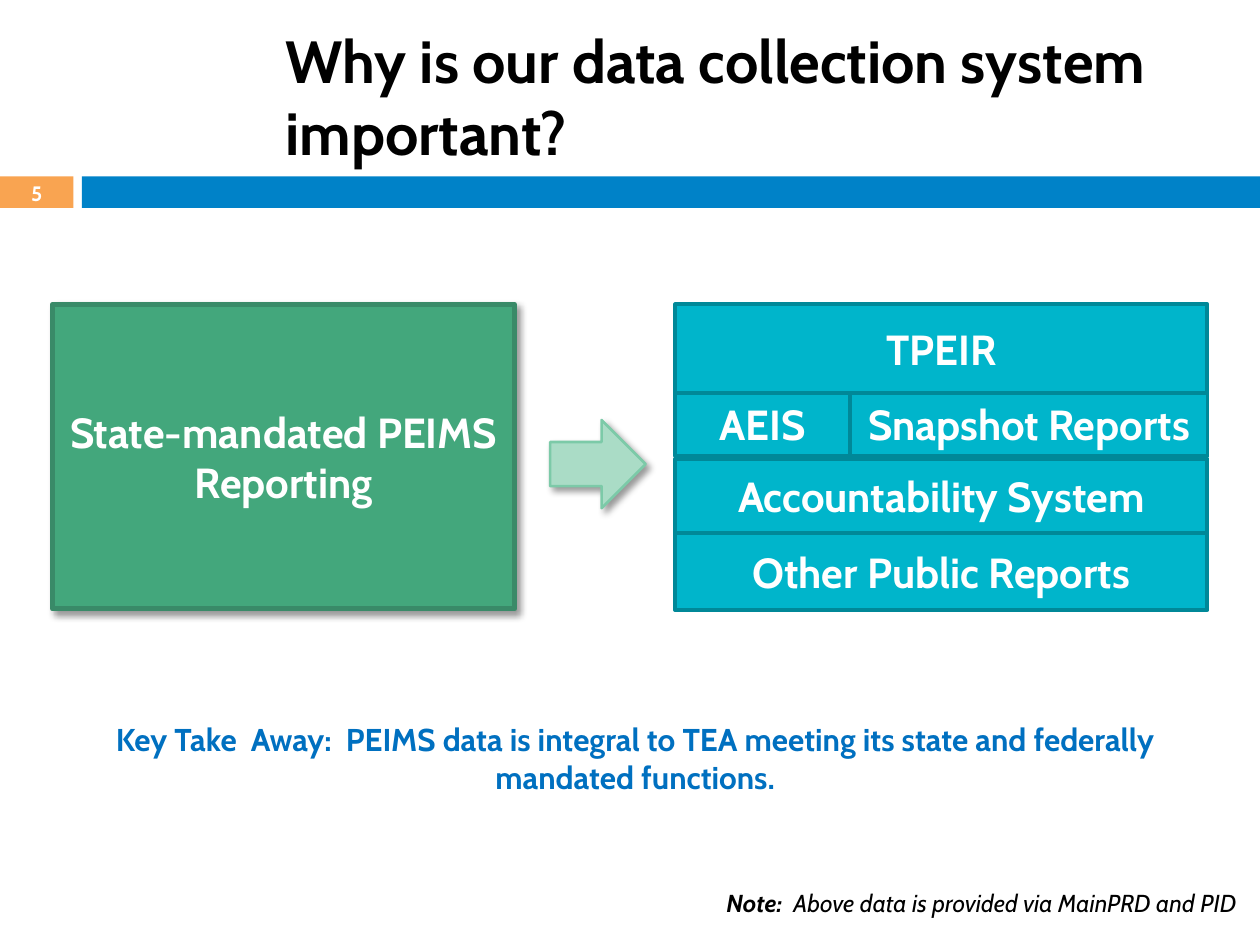
from lxml.etree import SubElement
from pptx import Presentation
from pptx.dml.color import RGBColor
from pptx.enum.shapes import MSO_SHAPE as Shape
from pptx.enum.text import MSO_ANCHOR as Anchor, PP_ALIGN as Align
from pptx.oxml.ns import qn
from pptx.util import Inches, Pt

COLORS = {
    "black": "000000", "white": "FFFFFF", "orange": "F9A451", "blue": "0082C8",
    "green": "43A77C", "green_line": "398A68", "mint": "AADCC6",
    "mint_line": "7CCAA8", "teal": "00B5CB", "teal_line": "008898",
    "key_blue": "0070C0",
}
COLUMNS, ROWS = 120, 90


class SlideBuilder:
    """Draws elements on one slide; lengths are grid columns and rows."""

    font = "Cabin"

    def __init__(self, presentation):
        self.slide = presentation.slides.add_slide(presentation.slide_layouts[5])
        self.column = presentation.slide_width / COLUMNS
        self.row = presentation.slide_height / ROWS

    def box(self, left, top, width, height):
        return (round(left * self.column), round(top * self.row),
                round(width * self.column), round(height * self.row))

    def color(self, name):
        return RGBColor.from_string(COLORS[name])

    def format_text(self, frame, size, color, align, anchor, wrap=True):
        frame.word_wrap = wrap
        frame.vertical_anchor = anchor
        for paragraph in frame.paragraphs:
            paragraph.alignment = align
            for run in paragraph.runs:
                run.font.name = self.font
                run.font.size = Pt(size)
                run.font.bold = True
                run.font.color.rgb = self.color(color)

    def title(self, text, *place):
        shape = self.slide.shapes.title
        shape.left, shape.top, shape.width, shape.height = self.box(*place)
        shape.text_frame.text = text
        self.format_text(shape.text_frame, 34, "black", Align.LEFT, Anchor.MIDDLE)

    def text(self, text, *place, size, color="black", align=Align.CENTER,
             anchor=Anchor.TOP, wrap=True):
        frame = self.slide.shapes.add_textbox(*self.box(*place)).text_frame
        frame.text = text
        self.format_text(frame, size, color, align, anchor, wrap)
        return frame

    def shape(self, kind, *place, fill, line=None, line_width=0, text="",
              shadow=False):
        shape = self.slide.shapes.add_shape(kind, *self.box(*place))
        shape.shadow.inherit = False
        shape.fill.solid()
        shape.fill.fore_color.rgb = self.color(fill)
        if line:
            shape.line.color.rgb = self.color(line)
            shape.line.width = Pt(line_width)
        else:
            shape.line.fill.background()
        if shadow:
            self.add_shadow(shape)
        if text:
            frame = shape.text_frame
            frame.text = text
            frame.margin_left = frame.margin_right = Inches(0.05)
            frame.margin_top = frame.margin_bottom = Inches(0.05)
            self.format_text(frame, 24, "white", Align.CENTER, Anchor.MIDDLE)

    def add_shadow(self, shape):
        effects = shape._element.spPr.find(qn("a:effectLst"))
        outer = SubElement(effects, qn("a:outerShdw"), blurRad=str(Pt(4)),
                           dist=str(Pt(3)), dir="2700000", algn="tl",
                           rotWithShape="0")
        tint = SubElement(outer, qn("a:srgbClr"), val=COLORS["black"])
        SubElement(tint, qn("a:alpha"), val="40000")


def main():
    presentation = Presentation()
    presentation.slide_width, presentation.slide_height = Inches(10), Inches(7.5)
    builder = SlideBuilder(presentation)

    # Header band with the slide number
    builder.shape(Shape.RECTANGLE, 0, 16.8, 7, 3, fill="orange")
    builder.shape(Shape.RECTANGLE, 7.8, 16.8, 112.2, 3, fill="blue")
    builder.title("Why is our data collection system important?", 26, 2.6, 89, 13)
    builder.text("5", 0, 16.8, 7, 3.2, size=11.9, color="white",
                 anchor=Anchor.MIDDLE)

    # Source of the data, and the arrow to its uses
    builder.shape(Shape.RECTANGLE, 5, 29, 44, 29, fill="green",
                  line="green_line", line_width=3, shadow=True,
                  text="State-mandated PEIMS\nReporting")
    builder.shape(Shape.RIGHT_ARROW, 52.4, 40, 9.1, 8.4, fill="mint",
                  line="mint_line", line_width=1.5, shadow=True)

    # Stack of reports: top, height and the labels with their widths
    stack_left, stack_width, first_width = 64.3, 50.7, 16.7
    stack = [
        (29, 8.4, [("TPEIR", stack_width)]),
        (37.4, 6, [("AEIS", first_width),
                   ("Snapshot Reports", stack_width - first_width)]),
        (43.7, 7.1, [("Accountability System", stack_width)]),
        (50.8, 7.3, [("Other Public Reports", stack_width)]),
    ]
    for top, height, cells in stack:
        left = stack_left
        for label, width in cells:
            builder.shape(Shape.RECTANGLE, left, top, width, height, fill="teal",
                          line="teal_line", line_width=2.25, text=label)
            left += width

    # Conclusion and note
    builder.text("Key Take  Away:  PEIMS data is integral to TEA meeting its "
                 "state and federally mandated functions.",
                 3, 68, 115, 8.5, size=18, color="key_blue")
    note = builder.text("Note:  ", 68, 84, 51, 4.1, size=14, align=Align.LEFT,
                        wrap=False)
    paragraph = note.paragraphs[0]
    paragraph.add_run().text = "Above data is provided via MainPRD and PID"
    builder.format_text(note, 14, "black", Align.LEFT, Anchor.TOP, wrap=False)
    for run in paragraph.runs:
        run.font.italic = True
    paragraph.runs[1].font.bold = False

    presentation.save("out.pptx")


if __name__ == "__main__":
    main()
